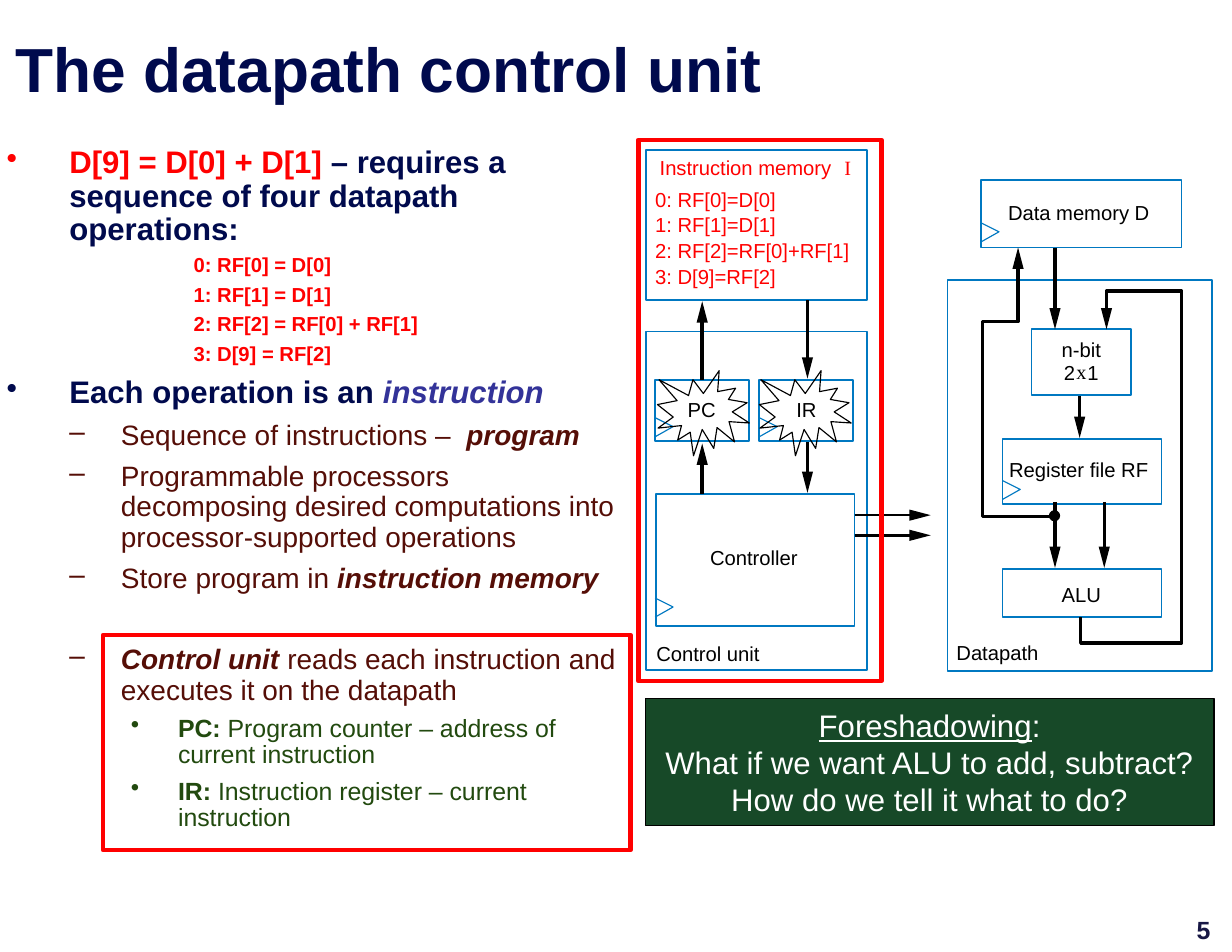
from dataclasses import dataclass

from lxml import etree
from pptx import Presentation
from pptx.dml.color import RGBColor
from pptx.enum import shapes, text
from pptx.oxml import ns
from pptx.util import Inches, Pt

BLACK = RGBColor(0x00, 0x00, 0x00)
WHITE = RGBColor(0xFF, 0xFF, 0xFF)
RED = RGBColor(0xFF, 0x00, 0x00)
BLUE = RGBColor(0x00, 0x78, 0xC1)
NAVY = RGBColor(0x00, 0x0A, 0x4D)
INDIGO = RGBColor(0x33, 0x33, 0x99)
MAROON = RGBColor(0x55, 0x0E, 0x07)
OLIVE = RGBColor(0x22, 0x4A, 0x0F)
GREEN = RGBColor(0x17, 0x49, 0x28)
PAGE_INK = RGBColor(0x17, 0x17, 0x45)

RECT = shapes.MSO_SHAPE.RECTANGLE
SEAL = shapes.MSO_SHAPE.EXPLOSION1
OVAL = shapes.MSO_SHAPE.OVAL
HEAD_LENGTH, HEAD_HALF = 0.19, 0.05


@dataclass
class Span:
    words: str
    color: RGBColor
    bold: bool = False
    italic: bool = False
    underline: bool = False


@dataclass
class Level:
    size: float
    left: float
    hanging: float
    before: float
    bullet: str = ""


@dataclass
class Arrow:
    start: tuple
    tip: tuple
    width: float = 2.25


LEVELS = [Level(20, 0.56, 0.56, 7, "•"), Level(18, 1.02, 0.46, 7, "–"),
          Level(16, 1.53, 0.42, 6, "•"), Level(13, 2.04, 0.37, 5)]

CODE = ["0: RF[0] = D[0]", "1: RF[1] = D[1]", "2: RF[2] = RF[0] + RF[1]", "3: D[9] = RF[2]"]

# Each entry: level, spans, extra space before in points
OUTLINE = [
    (0, [Span("D[9] = D[0] + D[1]", RED, True),
         Span(" – requires a sequence of four datapath operations:", NAVY, True)], 0),
    *[(3, [Span(step, RED, True)], 0) for step in CODE],
    (0, [Span("Each operation is an ", NAVY, True), Span("instruction", INDIGO, True, True)], 0),
    (1, [Span("Sequence of instructions –  ", MAROON), Span("program", MAROON, True, True)], 0),
    (1, [Span("Programmable processors decomposing desired computations into "
              "processor-supported operations", MAROON)], 0),
    (1, [Span("Store program in ", MAROON), Span("instruction memory", MAROON, True, True)], 0),
    (1, [Span("Control unit ", MAROON, True, True),
         Span("reads each instruction and executes it on the datapath", MAROON)], 26),
    (2, [Span("PC: ", OLIVE, True),
         Span("Program counter – address of current instruction", OLIVE)], 0),
    (2, [Span("IR: ", OLIVE, True), Span("Instruction register – current instruction", OLIVE)], 0),
]

# Left, top, width, height
BLOCKS = [(8.46, 2.5, 2.36, 3.49), (8.76, 1.61, 1.79, 0.6), (9.21, 2.94, 0.89, 0.59),
          (8.95, 3.92, 1.42, 0.58), (8.95, 5.08, 1.42, 0.43), (5.77, 2.96, 1.97, 3.02),
          (5.77, 1.34, 1.97, 1.34), (5.85, 3.39, 0.84, 0.55), (6.78, 3.39, 0.84, 0.55),
          (5.86, 4.41, 1.77, 1.18)]
CLOCKS = [(8.76, 1.99), (8.95, 4.29), (5.85, 3.73), (6.78, 3.73), (5.85, 5.34)]
ARROWS = [Arrow((9.42, 2.21), (9.42, 2.94)), Arrow((9.64, 3.54), (9.64, 3.91), 1.5),
          Arrow((9.42, 4.48), (9.42, 5.07)), Arrow((9.86, 4.48), (9.86, 5.07)),
          Arrow((6.27, 3.39), (6.27, 2.69)), Arrow((6.27, 4.41), (6.27, 3.96)),
          Arrow((7.21, 3.95), (7.21, 4.4)), Arrow((7.21, 2.68), (7.21, 3.38)),
          Arrow((7.63, 4.6), (8.31, 4.6), 1.5), Arrow((7.63, 4.78), (8.31, 4.78), 1.5)]
# Bent wires: the ALU result back to the mux, and the register file back to memory
ALU_LOOP = [(9.65, 5.51), (9.65, 5.74), (10.55, 5.74), (10.55, 2.6), (9.88, 2.6), (9.88, 2.94)]
STORE_LOOP = [(9.42, 4.61), (8.77, 4.61), (8.77, 2.87), (9.09, 2.87), (9.09, 2.21)]
# Left, top, width, words
LABELS = [(9.01, 4.08, 1.26, "Register file RF"), (9, 1.79, 1.28, "Data memory D"),
          (9.48, 5.2, 0.36, "ALU"), (9.48, 3.01, 0.36, "n-bit"), (9.5, 3.22, 0.1, "2"),
          (9.71, 3.22, 0.1, "1"), (8.54, 5.72, 0.74, "Datapath"),
          (5.86, 5.73, 0.94, "Control unit"), (6.14, 3.55, 0.25, "PC"),
          (7.11, 3.55, 0.2, "IR"), (6.34, 4.87, 0.79, "Controller")]


def write_spans(para, spans: list, size: float, font: str = "Arial") -> None:
    for span in spans:
        run = para.add_run()
        run.text = span.words
        run.font.name, run.font.size = font, Pt(size)
        run.font.bold, run.font.italic = span.bold, span.italic
        run.font.underline = span.underline
        run.font.color.rgb = span.color


def set_margins(frame, left: float, top: float, right: float, bottom: float) -> None:
    frame.margin_left, frame.margin_top = Inches(left), Inches(top)
    frame.margin_right, frame.margin_bottom = Inches(right), Inches(bottom)


def add_text(page, words: str, at: tuple, *, size: float = 13, color: RGBColor = BLACK,
             font: str = "Arial", bold: bool = False, wrap: bool = False,
             margins: tuple = (0, 0, 0, 0), align=text.PP_ALIGN.LEFT,
             anchor=text.MSO_ANCHOR.TOP):
    box = page.shapes.add_textbox(*map(Inches, at))
    frame = box.text_frame
    frame.word_wrap, frame.vertical_anchor = wrap, anchor
    set_margins(frame, *margins)
    para = frame.paragraphs[0]
    para.alignment = align
    if words:
        write_spans(para, [Span(words, color, bold)], size, font)
    return box


def style(shape, fill, line, width: float) -> None:
    shape.shadow.inherit = False
    if fill is None:
        shape.fill.background()
    else:
        shape.fill.solid()
        shape.fill.fore_color.rgb = fill
    if line is None:
        shape.line.fill.background()
    else:
        shape.line.color.rgb, shape.line.width = line, Pt(width)


def add_box(page, at: tuple, kind=RECT, fill=None, line=BLUE, width: float = 1.13):
    box = page.shapes.add_shape(kind, *map(Inches, at))
    style(box, fill, line, width)
    return box


def add_outline(page, points: list, close: bool = False, fill=None, line=None,
                width: float = 0.75) -> None:
    corners = [(Inches(x), Inches(y)) for x, y in points]
    builder = page.shapes.build_freeform(*corners[0])
    builder.add_line_segments(corners[1:], close=close)
    style(builder.convert_to_shape(), fill, line, width)


def add_head(page, start: tuple, tip: tuple) -> tuple:
    """Draw a solid arrowhead and return where its shaft should end."""
    (x0, y0), (x, y) = start, tip
    dx, dy = (x > x0) - (x < x0), (y > y0) - (y < y0)
    base_x, base_y = x - dx * HEAD_LENGTH, y - dy * HEAD_LENGTH
    add_outline(page, [tip, (base_x + dy * HEAD_HALF, base_y + dx * HEAD_HALF),
                       (base_x - dy * HEAD_HALF, base_y - dx * HEAD_HALF)], True, BLACK)
    return x - dx * 0.15, y - dy * 0.15


def add_arrow(page, arrow: Arrow) -> None:
    end = add_head(page, arrow.start, arrow.tip)
    line = page.shapes.add_connector(shapes.MSO_CONNECTOR.STRAIGHT,
                                     *map(Inches, (*arrow.start, *end)))
    line.line.color.rgb, line.line.width = BLACK, Pt(arrow.width)
    etree.SubElement(line._element.spPr, ns.qn("a:effectLst"))


def add_wire(page, points: list) -> None:
    end = add_head(page, points[-2], points[-1])
    add_outline(page, points[:-1] + [end], line=BLACK, width=2.25)


def add_body(page) -> None:
    frame = add_text(page, "", (0, 1.25, 5.67, 5.6), wrap=True,
                     margins=(0.06, 0.06, 0.11, 0.06)).text_frame
    for index, (depth, spans, extra) in enumerate(OUTLINE):
        level = LEVELS[depth]
        para = frame.add_paragraph() if index else frame.paragraphs[0]
        para.level, para.line_spacing = depth, 0.9
        para.space_before = Pt(level.before + extra)
        write_spans(para, spans, level.size)
        props = para._p.get_or_add_pPr()
        props.set("marL", str(Inches(level.left)))
        props.set("indent", str(-Inches(level.hanging)))
        if level.bullet:
            etree.SubElement(props, ns.qn("a:buChar")).set("char", level.bullet)


def add_callout(page) -> None:
    box = add_box(page, (5.76, 6.24, 5.08, 1.13), fill=GREEN, line=BLACK, width=0.75)
    frame = box.text_frame
    frame.word_wrap, frame.vertical_anchor = False, text.MSO_ANCHOR.MIDDLE
    set_margins(frame, 0.11, 0.06, 0.11, 0.06)
    lines = [[Span("Foreshadowing", WHITE, underline=True), Span(":", WHITE)],
             [Span("What if we want ALU to add, subtract?", WHITE)],
             [Span("How do we tell it what to do?", WHITE)]]
    for index, spans in enumerate(lines):
        para = frame.add_paragraph() if index else frame.paragraphs[0]
        para.alignment = text.PP_ALIGN.CENTER
        write_spans(para, spans, 20)


def main() -> None:
    deck = Presentation()
    deck.slide_width, deck.slide_height = Inches(11), Inches(8.5)
    page = deck.slides.add_slide(deck.slide_layouts[6])

    # Page number, title and outline
    add_text(page, "5", (10.56, 8.12, 0.37, 0.38), size=16, color=PAGE_INK, bold=True,
             margins=(0.1, 0.05, 0.1, 0.05), align=text.PP_ALIGN.CENTER)
    add_text(page, "The datapath control unit", (0.08, 0.08, 11, 1.04), size=40, color=NAVY,
             bold=True, wrap=True, margins=(0.06, 0.06, 0.11, 0.06),
             anchor=text.MSO_ANCHOR.MIDDLE)
    add_body(page)

    # Blocks, clock marks and wiring
    for at in BLOCKS:
        add_box(page, at)
    for x, y in CLOCKS:
        add_outline(page, [(x, y + 0.17), (x + 0.16, y + 0.08), (x, y)], line=BLUE)
    for points in (ALU_LOOP, STORE_LOOP):
        add_wire(page, points)
    for arrow in ARROWS:
        add_arrow(page, arrow)
    add_box(page, (9.37, 4.56, 0.09, 0.09), OVAL, BLACK, BLACK, 0.75)

    # Labels and the stored program
    for x, y, width, words in LABELS:
        add_text(page, words, (x, y, width, 0.23))
    add_text(page, "x", (9.61, 3.21, 0.09, 0.23), font="Times New Roman")
    add_text(page, "Instruction memory", (5.89, 1.39, 1.56, 0.23), color=RED)
    add_text(page, "I", (7.54, 1.39, 0.06, 0.23), color=RED, font="Times New Roman")
    for index, step in enumerate(CODE):
        add_text(page, step.replace(" = ", "=").replace(" + ", "+"),
                 (5.85, 1.67 + 0.23 * index, 1.76, 0.23), color=RED)

    # Highlights and callout
    for x in (5.87, 6.78):
        add_box(page, (x, 3.31, 0.82, 0.76), SEAL, line=BLACK, width=0.75)
    add_callout(page)
    for at in ((0.92, 5.67, 4.71, 1.92), (5.7, 1.25, 2.17, 4.83)):
        add_box(page, at, line=RED, width=3)

    deck.save("out.pptx")


if __name__ == "__main__":
    main()
